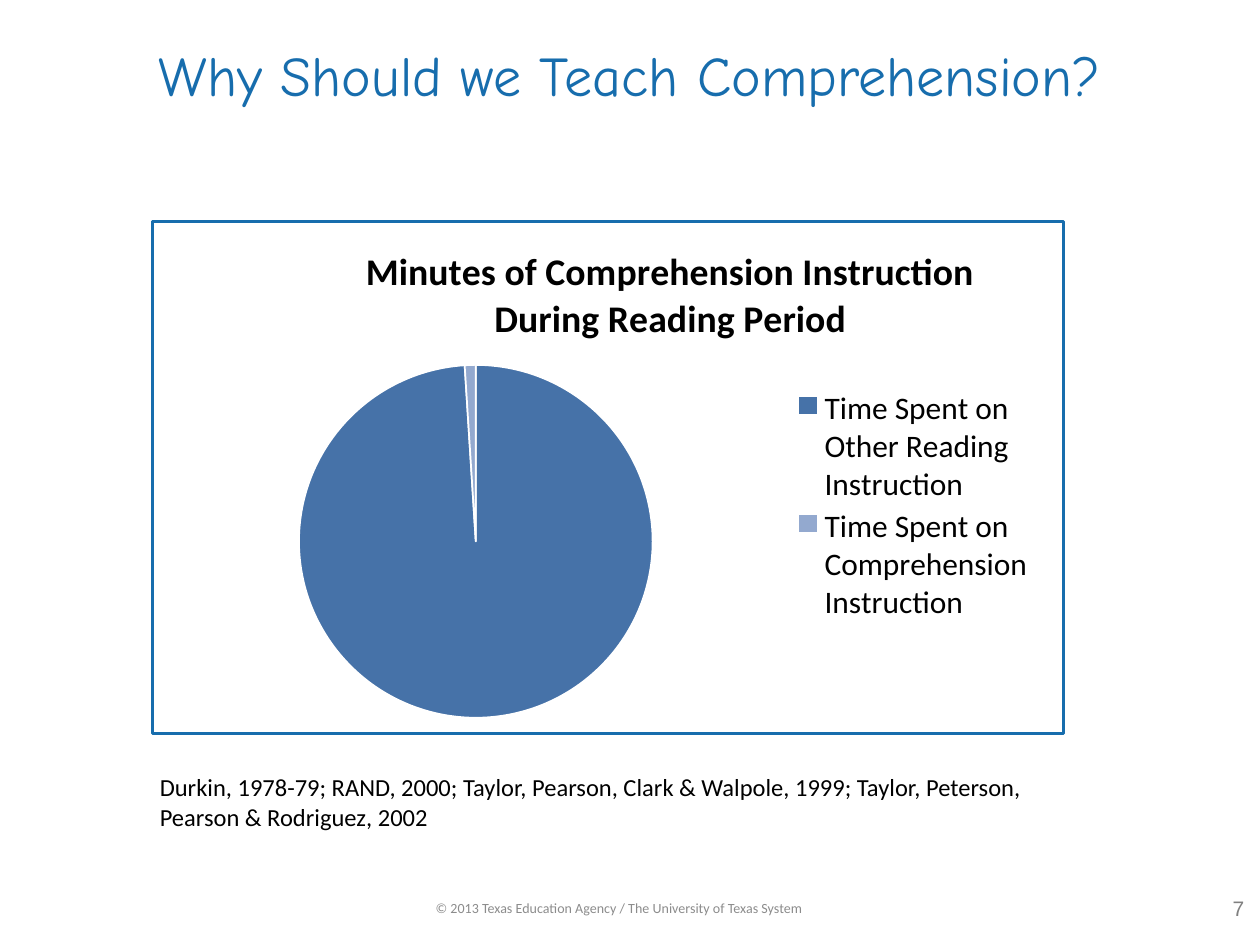
from lxml import etree
from pptx import Presentation
from pptx.chart.data import CategoryChartData
from pptx.dml.color import RGBColor
from pptx.enum.chart import XL_CHART_TYPE, XL_LEGEND_POSITION
from pptx.enum.text import MSO_ANCHOR, PP_ALIGN
from pptx.oxml import parse_xml
from pptx.oxml.ns import nsdecls, qn
from pptx.util import Inches, Pt

PIE = XL_CHART_TYPE.PIE
RIGHT = XL_LEGEND_POSITION.RIGHT
TOP, MIDDLE = MSO_ANCHOR.TOP, MSO_ANCHOR.MIDDLE
LEFT, CENTER = PP_ALIGN.LEFT, PP_ALIGN.CENTER
BLUE = "176DAD"
BLACK = "000000"


def rgb(value):
    return RGBColor.from_string(value)


def style_font(font, size, color, name="Calibri", bold=False):
    font.size = Pt(size)
    font.name = name
    font.bold = bold
    font.color.rgb = rgb(color)


def write_text(tf, text, size, color, name="Calibri", bold=False, align=LEFT):
    for i, line in enumerate(text.split("\n")):
        p = tf.paragraphs[0] if i == 0 else tf.add_paragraph()
        p.alignment = align
        r = p.add_run()
        r.text = line
        style_font(r.font, size, color, name, bold)


def add_title(slide, text):
    sp = slide.shapes.title
    sp.left, sp.top = Inches(0), Inches(0.17)
    sp.width, sp.height = Inches(10), Inches(0.83)
    sp.text_frame.vertical_anchor = MIDDLE
    write_text(sp.text_frame, text, 32, BLUE, name="Comic Neue", align=CENTER)


def add_label(slide, box, text, size, color, anchor=TOP, **fmt):
    tf = slide.shapes.add_textbox(*map(Inches, box)).text_frame
    tf.word_wrap = True
    tf.vertical_anchor = anchor
    write_text(tf, text, size, color, **fmt)


def place(chart, part, after=None, **fractions):
    element = chart.element.find(f".//{qn(part)}")
    for old in element.findall(qn("c:layout")):
        element.remove(old)
    layout = parse_xml(f"<c:layout {nsdecls('c')}><c:manualLayout/></c:layout>")
    manual = layout[0]
    if after is None:
        etree.SubElement(manual, qn("c:layoutTarget")).set("val", "inner")
    for key in ("x", "y"):
        etree.SubElement(manual, qn(f"c:{key}Mode")).set("val", "edge")
    for key, value in fractions.items():
        etree.SubElement(manual, qn(f"c:{key}")).set("val", str(value))
    if after is None:
        element.insert(0, layout)
    else:
        element.find(qn(after)).addnext(layout)


def add_border(chart, color, width):
    border = parse_xml(
        f"<c:spPr {nsdecls('c', 'a')}><a:noFill/><a:ln w=\"{Pt(width)}\">"
        f"<a:solidFill><a:srgbClr val=\"{color}\"/></a:solidFill></a:ln></c:spPr>"
    )
    chart.element.find(qn("c:chart")).addnext(border)


def add_pie(slide, box, title, values, colors):
    data = CategoryChartData()
    data.categories = list(values)
    data.add_series("Series 1", list(values.values()))
    chart = slide.shapes.add_chart(PIE, *map(Inches, box), data).chart
    style_font(chart.font, 18, BLACK)
    add_border(chart, BLUE, 1.5)

    chart.has_title = True
    write_text(chart.chart_title.text_frame, title, 21.6, BLACK,
               bold=True, align=CENTER)
    place(chart, "c:title", "c:tx", x=0.23, y=0.04)

    chart.has_legend = True
    legend = chart.legend
    legend.position = RIGHT
    legend.include_in_layout = False
    style_font(legend.font, 18, BLACK)
    place(chart, "c:legend", "c:legendPos", x=0.7, y=0.32, w=0.27, h=0.47)

    plot = chart.plots[0]
    plot.vary_by_categories = True
    place(chart, "c:plotArea", x=0.16, y=0.28, w=0.39, h=0.69)
    for i, color in enumerate(colors):
        fmt = plot.series[0].points[i].format
        fmt.fill.solid()
        fmt.fill.fore_color.rgb = rgb(color)
        fmt.line.color.rgb = rgb("FFFFFF")
        fmt.line.width = Pt(1)


def main():
    prs = Presentation()
    prs.slide_width, prs.slide_height = Inches(10), Inches(7.5)
    slide = prs.slides.add_slide(prs.slide_layouts[5])

    add_title(slide, "Why Should we Teach Comprehension?")
    add_pie(
        slide, (1.2, 1.75, 7.25, 4.08),
        "Minutes of Comprehension Instruction\nDuring Reading Period",
        {"Time Spent on Other Reading Instruction": 99,
         "Time Spent on Comprehension Instruction": 1},
        ("4672A8", "93A9CF"),
    )
    add_label(
        slide, (1.17, 6.08, 7.67, 0.57),
        "Durkin, 1978-79; RAND, 2000; Taylor, Pearson, Clark & Walpole, 1999; "
        "Taylor, Peterson, Pearson & Rodriguez, 2002", 14, BLACK,
    )
    add_label(
        slide, (2.08, 7.08, 5.67, 0.25),
        "© 2013 Texas Education Agency / The University of Texas System",
        8, "8C8C8C", anchor=MIDDLE, align=CENTER,
    )
    add_label(slide, (9.58, 7.07, 0.5, 0.27), "7", 12, "808080",
              anchor=MIDDLE, name="Arial", align=CENTER)
    prs.save("out.pptx")


if __name__ == "__main__":
    main()
